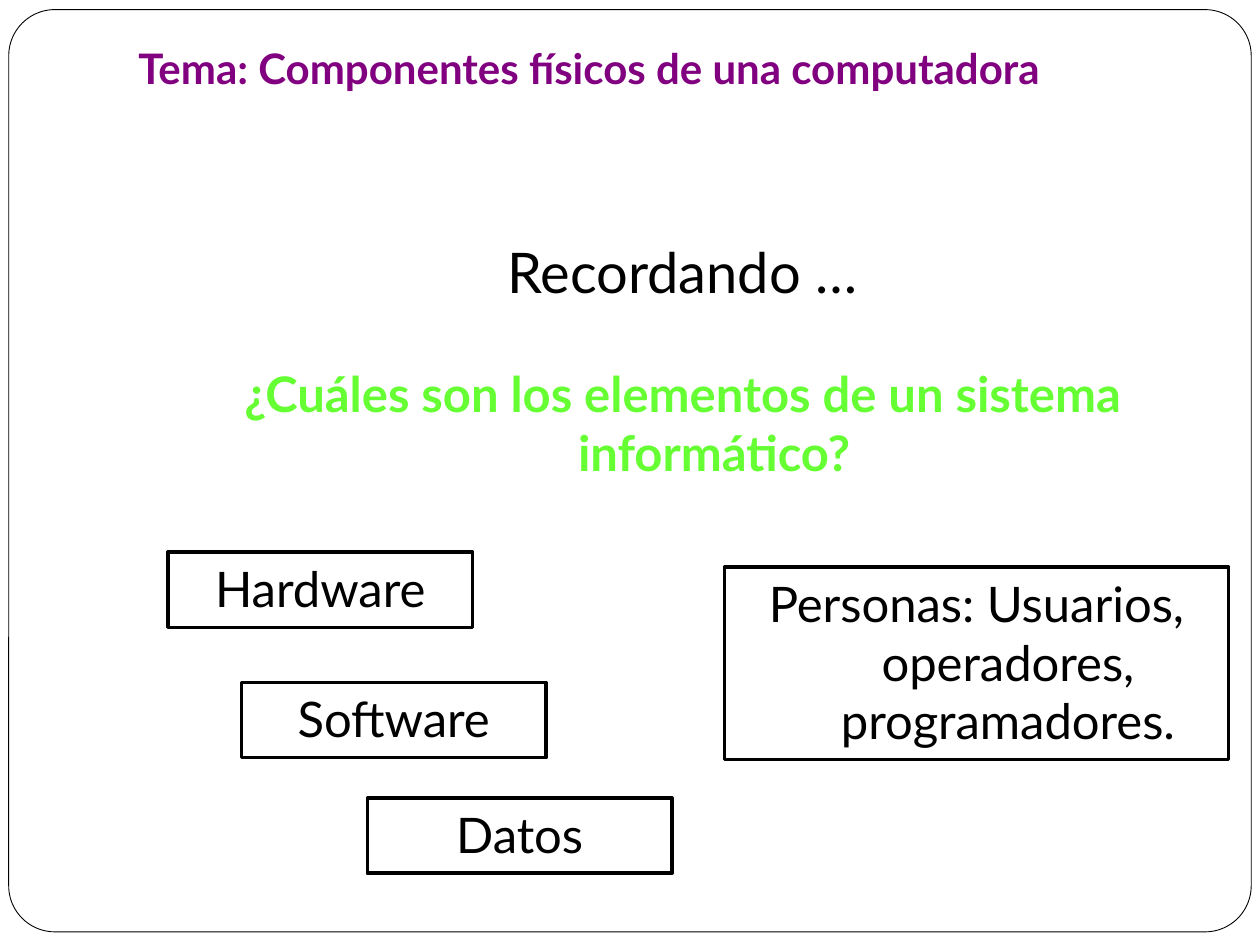
import pptx
import pptx.util
import pptx.dml.color
import pptx.enum.shapes
import pptx.enum.text

Pt = pptx.util.Pt
KIND = pptx.enum.shapes.MSO_SHAPE
ALIGN = pptx.enum.text.PP_ALIGN
FIT = pptx.enum.text.MSO_AUTO_SIZE
TOP = pptx.enum.text.MSO_ANCHOR.TOP

FONT = "Lato"
BLACK, WHITE, PURPLE, GREEN = "000000", "FFFFFF", "800080", "66FF33"
HANG = 36

# Content: text, (left, top, width, height)
TITLE = ("Tema: Componentes físicos de una computadora", (72, 21, 600.5, 36))
ASK = ("¿Cuáles son los elementos de un sistema informático?", (72, 204, 636, 74))
RECALL = ("Recordando …", (72, 132, 636, 45.5))
PARTS = [
    ("Hardware", (96, 315.5, 174, 43)),
    ("Software", (138, 390, 174, 43)),
    ("Datos", (210, 456, 174, 43)),
    ("Personas: Usuarios, operadores, programadores.", (414, 324, 288, 110)),
]


def rgb(code):
    return pptx.dml.color.RGBColor.from_string(code)


def write(shape, text, size, color, bold=False, wrap=True, align=ALIGN.CENTER, hang=0):
    frame = shape.text_frame
    frame.text = text
    frame.word_wrap = wrap
    frame.auto_size = FIT.SHAPE_TO_FIT_TEXT
    frame.vertical_anchor = TOP
    para = frame.paragraphs[0]
    para.alignment = align
    if hang:
        props = para._p.get_or_add_pPr()
        props.set("marL", str(Pt(hang)))
        props.set("indent", str(-Pt(hang)))
    font = para.runs[0].font
    font.name, font.size, font.bold = FONT, Pt(size), bold
    font.color.rgb = rgb(color)


def label(item, *style, **more):
    text, place = item
    shape = slide.shapes.add_textbox(*map(Pt, place))
    write(shape, text, *style, **more)


def box(kind, place, width, fill=None):
    shape = slide.shapes.add_shape(kind, *map(Pt, place))
    shape.shadow.inherit = False
    if fill:
        shape.fill.solid()
        shape.fill.fore_color.rgb = rgb(fill)
    else:
        shape.fill.background()
    shape.line.color.rgb = rgb(BLACK)
    shape.line.width = Pt(width)
    return shape


deck = pptx.Presentation()
deck.slide_width, deck.slide_height = Pt(720), Pt(540)
slide = deck.slides.add_slide(deck.slide_layouts[6])

# Rounded page frame
frame = box(KIND.ROUNDED_RECTANGLE, (5, 5.5, 710, 527), 0.5, WHITE)
frame.adjustments[0] = 0.05

# Headings
label(TITLE, 24, PURPLE, bold=True, wrap=False, align=ALIGN.LEFT)
label(ASK, 28, GREEN, bold=True, hang=HANG)
label(RECALL, 32, BLACK)

# Elements of the system
for text, place in PARTS:
    write(box(KIND.RECTANGLE, place, 2), text, 28, BLACK, hang=HANG)

deck.save("out.pptx")
